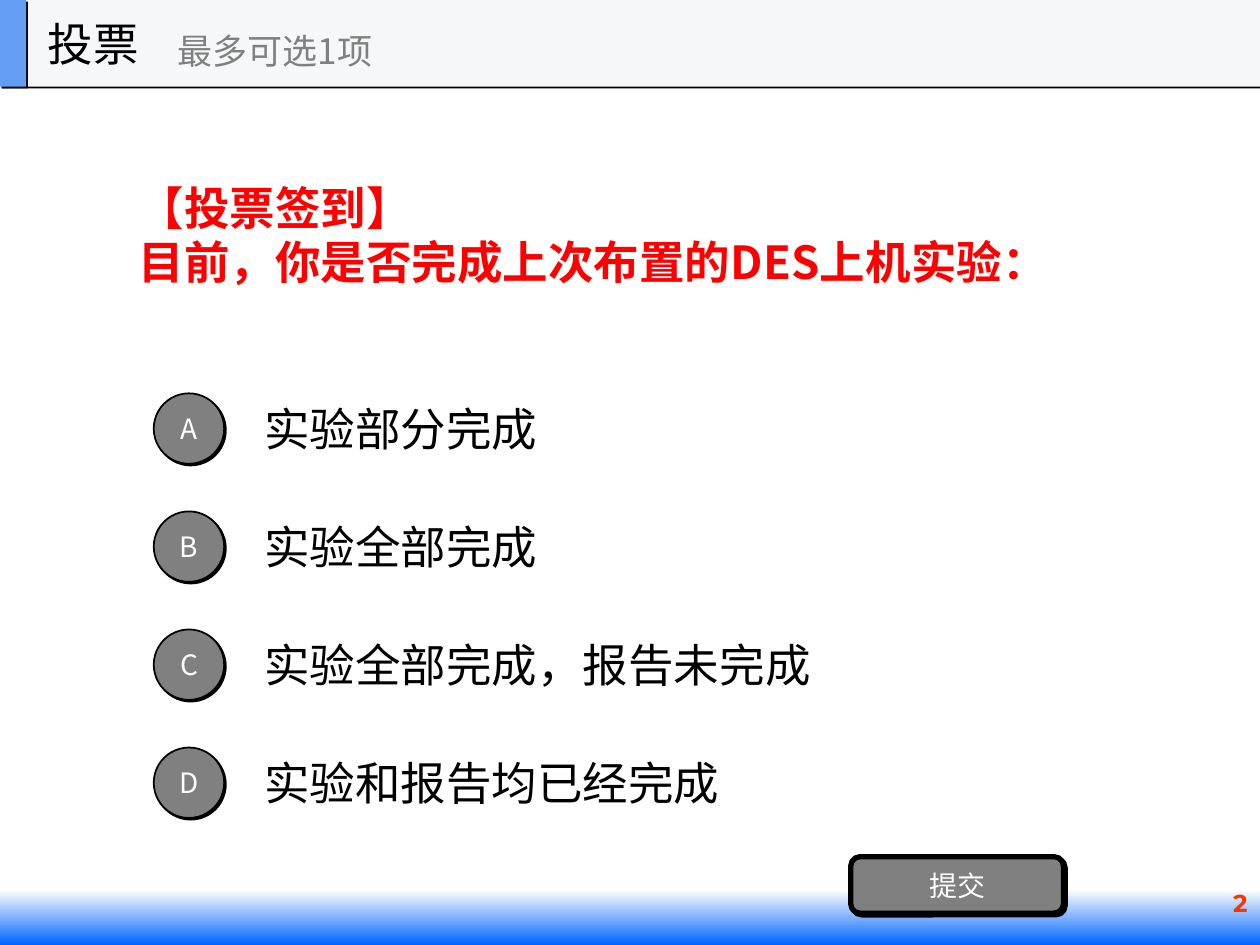
from dataclasses import dataclass

from lxml.etree import SubElement
from pptx import Presentation
from pptx.dml.color import RGBColor
from pptx.enum.shapes import MSO_SHAPE as SHAPE
from pptx.enum.text import MSO_ANCHOR as ANCHOR, MSO_AUTO_SIZE as AUTO, PP_ALIGN as ALIGN
from pptx.oxml.ns import qn
from pptx.util import Cm, Pt


@dataclass(frozen=True)
class Theme:
    font: str = "Noto Sans CJK SC"
    number_font: str = "Montserrat"
    black: str = "000000"
    white: str = "FFFFFF"
    gray: str = "808080"
    red: str = "FF0000"
    number: str = "FF3300"
    header: str = "F6F7F8"
    accent: str = "639EF4"
    footer: str = "0066FF"
    large: int = 26
    medium: int = 20
    small: int = 16
    tiny: int = 14


THEME = Theme()
OPTIONS = ["实验部分完成", "实验全部完成", "实验全部完成，报告未完成", "实验和报告均已经完成"]
OPTION_TOP, OPTION_STEP, OPTION_HEIGHT = 7.75, 2.38, 1.78
CIRCLE = 1.42


def rgb(color):
    return RGBColor.from_string(color)


def write(sp, lines, size, color, align=ALIGN.LEFT, anchor=ANCHOR.MIDDLE,
          bold=False, font=THEME.font):
    tf = sp.text_frame
    frame = {"word_wrap": True, "auto_size": AUTO.NONE, "vertical_anchor": anchor}
    for name, value in frame.items():
        setattr(tf, name, value)
    formats = {"name": font, "size": Pt(size), "bold": bold}
    for i, line in enumerate(lines):
        p = tf.add_paragraph() if i else tf.paragraphs[0]
        p.alignment = align
        r = p.add_run()
        r.text = line
        r.font.color.rgb = rgb(color)
        for name, value in formats.items():
            setattr(r.font, name, value)
        SubElement(r.font._element, qn("a:ea"), typeface=font)


def add_text(shapes, box, text, size, color, **options):
    sp = shapes.add_textbox(*map(Cm, box))
    write(sp, [text], size, color, **options)


def add_shadow(sp):
    effects = sp._element.spPr.find(qn("a:effectLst"))
    shadow = SubElement(effects, qn("a:outerShdw"), dist=str(Pt(1.4)),
                        dir="2700000", algn="ctr", rotWithShape="0")
    SubElement(shadow, qn("a:srgbClr"), val=THEME.black)


def add_shape(shapes, kind, box, fill, line_width=0, shadow=True):
    sp = shapes.add_shape(kind, *map(Cm, box))
    sp.fill.solid()
    sp.fill.fore_color.rgb = rgb(fill)
    if line_width:
        sp.line.color.rgb = rgb(THEME.black)
        sp.line.width = Pt(line_width)
    else:
        sp.line.fill.background()
    sp.shadow.inherit = False
    if shadow:
        add_shadow(sp)
    return sp


def add_button(shapes, kind, box, text, line_width):
    sp = add_shape(shapes, kind, box, THEME.gray, line_width)
    for side in ("left", "right", "top", "bottom"):
        setattr(sp.text_frame, f"margin_{side}", 0)
    write(sp, [text], THEME.small, THEME.white, align=ALIGN.CENTER)


def add_footer(shapes):
    sp = add_shape(shapes, SHAPE.RECTANGLE, (0, 17.93, 25.4, 1.12), THEME.white, shadow=False)
    sp.fill.gradient()
    sp.fill.gradient_angle = 270
    for stop, color, position in zip(sp.fill.gradient_stops, (THEME.white, THEME.footer), (0, 1)):
        stop.color.rgb = rgb(color)
        stop.position = position


def add_question(slide):
    title = slide.shapes.title
    place = {"left": Cm(2.54), "top": Cm(1.75), "width": Cm(20.32), "height": Cm(5.94)}
    for name, value in place.items():
        setattr(title, name, value)
    lines = ["【投票签到】", "目前，你是否完成上次布置的DES上机实验："]
    write(title, lines, THEME.large, THEME.red, bold=True)


def add_options(shapes):
    for i, (letter, text) in enumerate(zip("ABCD", OPTIONS)):
        top = OPTION_TOP + i * OPTION_STEP
        add_text(shapes, (5.08, top, 17.78, OPTION_HEIGHT), text, THEME.large, THEME.black)
        circle_top = top + (OPTION_HEIGHT - CIRCLE) / 2
        add_button(shapes, SHAPE.OVAL, (3.1, circle_top, CIRCLE, CIRCLE), letter, 1)


def add_header(shapes):
    group = shapes.add_group_shape().shapes
    add_shape(group, SHAPE.RECTANGLE, (0, 0, 25.4, 1.75), THEME.header)
    add_shape(group, SHAPE.RECTANGLE, (0, 0, 0.53, 1.75), THEME.accent)
    add_text(group, (0.71, 0, 5.28, 1.75), "投票", THEME.large, THEME.black)
    add_text(group, (3.33, 0.3, 6.35, 1.42), "最多可选1项", THEME.medium, THEME.gray)


def main():
    prs = Presentation()
    prs.slide_width, prs.slide_height = Cm(25.4), Cm(19.05)
    slide = prs.slides.add_slide(prs.slide_layouts[5])
    shapes = slide.shapes
    add_footer(shapes)
    add_question(slide)
    add_options(shapes)
    add_button(shapes, SHAPE.ROUNDED_RECTANGLE, (17.15, 17.27, 4.29, 1.14), "提交", 3)
    add_header(shapes)
    add_text(shapes, (17.91, 17.78, 7.49, 1.27), "2", THEME.tiny, THEME.number,
             align=ALIGN.RIGHT, anchor=ANCHOR.TOP, bold=True, font=THEME.number_font)
    prs.save("out.pptx")


if __name__ == "__main__":
    main()
